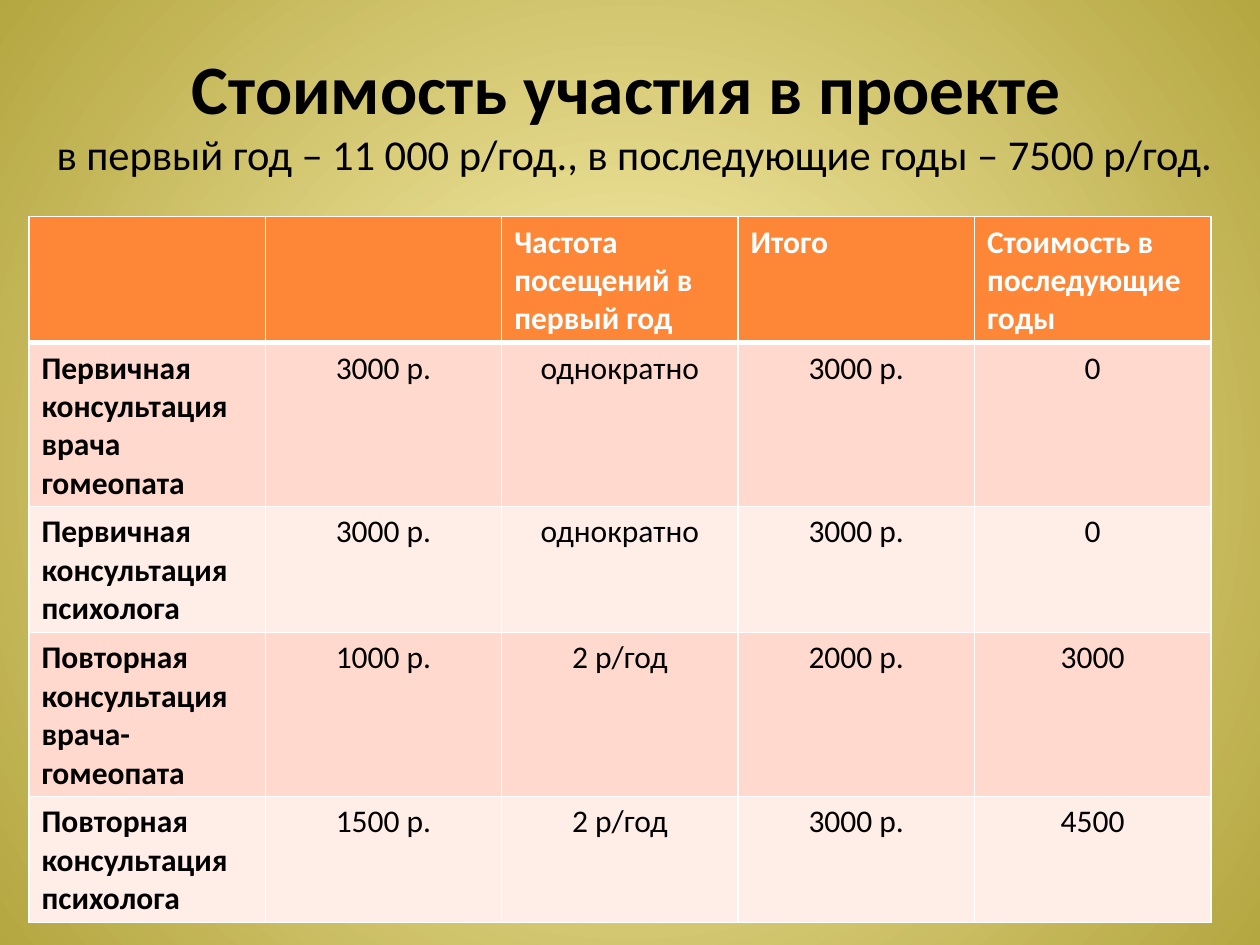
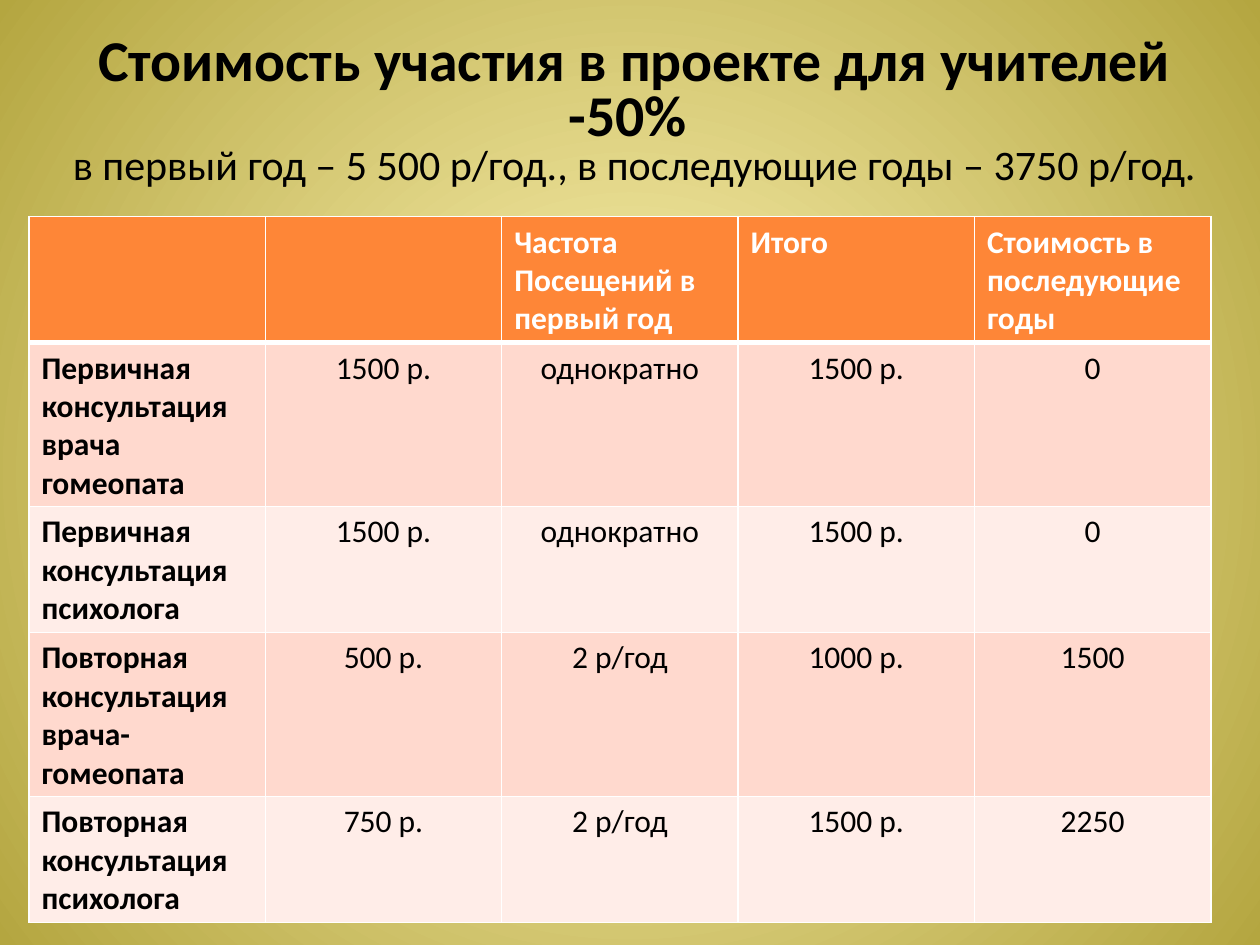
from lxml import etree
from pptx import Presentation
from pptx.dml.color import RGBColor
from pptx.enum.text import MSO_ANCHOR, PP_ALIGN
from pptx.oxml.ns import qn
from pptx.util import Inches, Pt

CENTER, LEFT = PP_ALIGN.CENTER, PP_ALIGN.LEFT
MIDDLE = MSO_ANCHOR.MIDDLE

FONT = "Calibri"
BLACK, WHITE = "000000", "FFFFFF"
GLOW, OLIVE = "FFF5B6", "B4A640"
HEADER_FILL = "FE8637"
BAND_FILLS = ("FFD9CE", "FFEDE8")

SERVICES = (
    "Первичная консультация врача гомеопата",
    "Первичная консультация психолога",
    "Повторная консультация врача-гомеопата",
    "Повторная консультация психолога",
)
FREQUENCIES = ("однократно", "однократно", "2 р/год", "2 р/год")

SLIDES = [
    {
        "title": "Стоимость участия в проекте ",
        "subtitle": "в первый год – 11 000 р/год., в последующие годы – 7500 р/год.",
        "box": (0.31, 0.3, 9.45, 1.18),
        "sizes": (39.6, 24.3),
        "spacing": 1.0,
        "frequency": "Частота посещений в первый год",
        "prices": ("3000 р.", "3000 р.", "1000 р.", "1500 р."),
        "totals": ("3000 р.", "3000 р.", "2000 р.", "3000 р."),
        "later": ("0", "0", "3000", "4500"),
    },
    {
        "title": "Стоимость участия в проекте для учителей -50% ",
        "subtitle": "в первый год – 5 500 р/год., в последующие годы – 3750 р/год.",
        "box": (0.31, 0.23, 9.45, 1.33),
        "sizes": (33, 24),
        "spacing": 0.8,
        "frequency": "Частота\nПосещений в первый год",
        "prices": ("1500 р.", "1500 р.", "500 р.", "750 р."),
        "totals": ("1500 р.", "1500 р.", "1000 р.", "1500 р."),
        "later": ("0", "0", "1500", "2250"),
    },
]

TABLE_BOX = (0.23, 1.72, 9.38, 5.6)
MIN_ROW = 0.41


def rgb(color):
    return RGBColor.from_string(color)


def style(r, size, color, bold):
    r.font.name = FONT
    r.font.size = Pt(size)
    r.font.bold = bold
    r.font.color.rgb = rgb(color)


def set_background(master):
    fill = master.background.fill
    fill.gradient()
    for stop, color, position in zip(fill.gradient_stops, (GLOW, OLIVE), (0, 1)):
        stop.color.rgb = rgb(color)
        stop.position = position
    grad = master.element.find(".//" + qn("a:gradFill"))
    for lin in grad.findall(qn("a:lin")):
        grad.remove(lin)
    path = etree.SubElement(grad, qn("a:path"), path="circle")
    etree.SubElement(path, qn("a:fillToRect"), dict.fromkeys("ltrb", "50000"))


def add_title(s, data):
    tf = s.shapes.add_textbox(*map(Inches, data["box"])).text_frame
    tf.word_wrap = True
    tf.vertical_anchor = MIDDLE
    p = tf.paragraphs[0]
    p.text = data["title"] + "\v" + data["subtitle"]
    p.alignment = CENTER
    p.line_spacing = data["spacing"]
    for r, size, bold in zip(p.runs, data["sizes"], (True, False)):
        style(r, size, BLACK, bold)


def add_borders(cell, top, bottom):
    tcPr = cell._tc.get_or_add_tcPr()
    for side, width in (("L", 1), ("R", 1), ("T", top), ("B", bottom)):
        ln = etree.SubElement(tcPr, qn("a:ln" + side), w=str(Pt(width)))
        fill = etree.SubElement(ln, qn("a:solidFill"))
        etree.SubElement(fill, qn("a:srgbClr"), val=WHITE)


def add_price_table(s, data):
    header = ("", "", data["frequency"], "Итого", "Стоимость в последующие годы")
    body = zip(SERVICES, data["prices"], FREQUENCIES, data["totals"], data["later"])
    rows = [header, *body]
    left, top, width, height = map(Inches, TABLE_BOX)
    frame = s.shapes.add_table(len(rows), len(header), left, top, width, height)
    table = frame.table
    for i, values in enumerate(rows):
        table.rows[i].height = Inches(MIN_ROW)
        is_header = i == 0
        for j, value in enumerate(values):
            cell = table.cell(i, j)
            add_borders(cell, 3 if i == 1 else 1, 3 if is_header else 1)
            cell.fill.solid()
            cell.fill.fore_color.rgb = rgb(HEADER_FILL if is_header else BAND_FILLS[(i - 1) % 2])
            cell.text_frame.text = value
            for p in cell.text_frame.paragraphs:
                p.alignment = LEFT if is_header or j == 0 else CENTER
                for r in p.runs:
                    style(r, 18, WHITE if is_header else BLACK, is_header or j == 0)
    frame.height = height


def main():
    prs = Presentation()
    prs.slide_width, prs.slide_height = Inches(10), Inches(7.5)
    set_background(prs.slide_master)
    for data in SLIDES:
        s = prs.slides.add_slide(prs.slide_layouts[6])
        add_title(s, data)
        add_price_table(s, data)
    prs.save("out.pptx")


if __name__ == "__main__":
    main()
